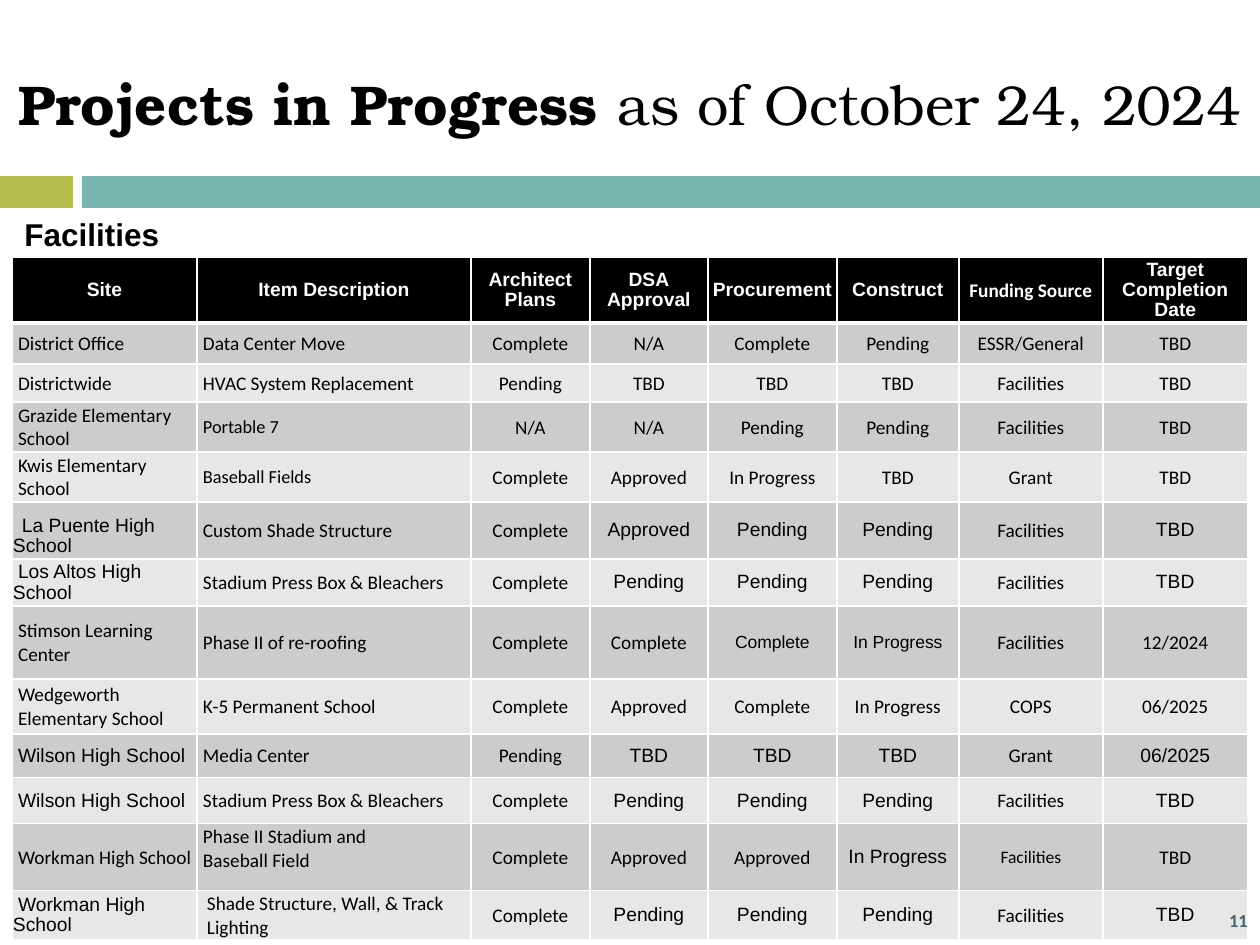
import dataclasses

import pptx
import pptx.dml.color
import pptx.enum.shapes
import pptx.enum.text
import pptx.oxml
import pptx.oxml.ns
import pptx.util

RGBColor = pptx.dml.color.RGBColor
ALIGN = pptx.enum.text.PP_ALIGN
ANCHOR = pptx.enum.text.MSO_ANCHOR

BLACK = RGBColor(0x00, 0x00, 0x00)
WHITE = RGBColor(0xFF, 0xFF, 0xFF)
DARK = RGBColor(0xCC, 0xCC, 0xCC)
LIGHT = RGBColor(0xE7, 0xE7, 0xE7)
LIME = RGBColor(0xB4, 0xBC, 0x4C)
TEAL = RGBColor(0x79, 0xB5, 0xB0)
SLATE = RGBColor(0x4A, 0x60, 0x6E)

WIDTHS = [185, 274, 119, 118, 129, 122, 144, 145]
ARIAL = frozenset({0, 3, 4, 5, 7})


@dataclasses.dataclass(frozen=True)
class Row:
    height: int
    texts: str
    arial: frozenset = frozenset()
    sizes: dict = dataclasses.field(default_factory=dict)
    indents: dict = dataclasses.field(default_factory=dict)
    tops: dict = dataclasses.field(default_factory=dict)
    bottoms: dict = dataclasses.field(default_factory=dict)


@dataclasses.dataclass(frozen=True)
class Label:
    box: tuple
    pieces: tuple
    font: str
    size: float
    color: RGBColor
    align: ALIGN
    anchor: ANCHOR = ANCHOR.MIDDLE
    bottom: int = 6


ROWS = [
    Row(66, "Site|Item Description|Architect\nPlans|DSA\nApproval|Procurement|Construct"
        "|Funding Source|Target Completion Date", frozenset({0, 1, 2, 3, 4, 5, 7})),
    Row(41, "District Office|Data Center Move|Complete|N/A|Complete|Pending|ESSR/General|TBD"),
    Row(38, "Districtwide|HVAC System Replacement|Pending|TBD|TBD|TBD|Facilities|TBD"),
    Row(50, "Grazide Elementary\nSchool|Portable 7|N/A|N/A|Pending|Pending|Facilities|TBD",
        sizes={1: 10.5}),
    Row(50, "Kwis Elementary\nSchool|Baseball Fields|Complete|Approved|In Progress|TBD|Grant|TBD",
        sizes={1: 10.5}),
    Row(57, "La Puente High School|Custom Shade Structure|Complete|Approved|Pending|Pending"
        "|Facilities|TBD", ARIAL, indents={0: 9}, tops={0: 12}),
    Row(47, "Los Altos High School|Stadium Press Box & Bleachers|Complete|Pending|Pending|Pending"
        "|Facilities|TBD", ARIAL),
    Row(73, "Stimson Learning\nCenter|Phase II of re-roofing|Complete|Complete|Complete"
        "|In Progress|Facilities|12/2024", frozenset({4, 5}), {4: 10, 5: 10}),
    Row(55, "Wedgeworth\nElementary School|K-5 Permanent School|Complete|Approved|Complete"
        "|In Progress|COPS|06/2025"),
    Row(44, "Wilson High School|Media Center|Pending|TBD|TBD|TBD|Grant|06/2025", ARIAL),
    Row(46, "Wilson High School|Stadium Press Box & Bleachers|Complete|Pending|Pending|Pending"
        "|Facilities|TBD", ARIAL),
    Row(67, "Workman High School|Phase II Stadium and\nBaseball Field|Complete|Approved|Approved"
        "|In Progress|Facilities|TBD", frozenset({5}), {6: 10}, bottoms={1: 18}),
    Row(49, "Workman High School|Shade Structure, Wall, & Track\nLighting|Complete|Pending"
        "|Pending|Pending|Facilities|TBD", ARIAL, indents={1: 9}),
]

LABELS = [
    Label((0, 82, 1260, 122),
          (("Projects in Progress ", True), ("as of October 24, 2024", False)),
          "TeX Gyre Bonum", 32, BLACK, ALIGN.CENTER, bottom=86),
    Label((12, 209, 261, 50), (("Facilities", True),),
          "Arial", 18, BLACK, ALIGN.LEFT, ANCHOR.TOP),
    Label((513, 895, 747, 50), (("11", True),), "Calibri", 10.5, SLATE, ALIGN.RIGHT),
]


def px(count: int) -> pptx.util.Emu:
    return pptx.util.Emu(round(count * 914400 / 126))


def style(run, font: str, size: float, color: RGBColor, bold: bool) -> None:
    run.font.name = font
    run.font.size = pptx.util.Pt(size)
    run.font.bold = bold
    run.font.color.rgb = color


def add_bar(slide, left: int, width: int, color: RGBColor) -> None:
    bar = slide.shapes.add_shape(pptx.enum.shapes.MSO_SHAPE.RECTANGLE,
                                 px(left), px(176), px(width), px(32))
    bar.shadow.inherit = False
    bar.fill.solid()
    bar.fill.fore_color.rgb = color
    bar.line.fill.background()


def add_label(slide, label: Label) -> None:
    frame = slide.shapes.add_textbox(*map(px, label.box)).text_frame
    frame.word_wrap = True
    frame.vertical_anchor = label.anchor
    frame.margin_bottom = px(label.bottom)
    para = frame.paragraphs[0]
    para.alignment = label.align
    for text, bold in label.pieces:
        run = para.add_run()
        run.text = text
        style(run, label.font, label.size, label.color, bold)


def add_edges(cell, head: bool) -> None:
    props = cell._tc.get_or_add_tcPr()
    for spot, side in enumerate("LRTB"):
        width = pptx.util.Pt(3 if head and side == "B" else 1)
        props.insert(spot, pptx.oxml.parse_xml(
            f'<a:ln{side} {pptx.oxml.ns.nsdecls("a")} w="{width}"><a:solidFill>'
            f'<a:srgbClr val="{WHITE}"/></a:solidFill></a:ln{side}>'))


def fill_cell(cell, text: str, row: Row, col: int, head: bool, back: RGBColor) -> None:
    cell.fill.solid()
    cell.fill.fore_color.rgb = back
    add_edges(cell, head)
    cell.vertical_anchor = ANCHOR.MIDDLE
    cell.margin_left = cell.margin_right = px(1)
    cell.margin_top = px(row.tops.get(col, 1))
    cell.margin_bottom = px(row.bottoms.get(col, 0))
    cell.text_frame.text = text
    arial = col in row.arial
    for para in cell.text_frame.paragraphs:
        if head or col > 1:
            para.alignment = ALIGN.CENTER
        else:
            para.alignment = ALIGN.LEFT
            para._p.get_or_add_pPr().set("indent", str(px(row.indents.get(col, 5))))
        if arial:
            para.line_spacing = 0.95
        for run in para.runs:
            style(run, "Arial" if arial else "Calibri", row.sizes.get(col, 11),
                  WHITE if head else BLACK, head)


def add_grid(slide) -> None:
    high = sum(row.height for row in ROWS)
    grid = slide.shapes.add_table(len(ROWS), len(WIDTHS), px(12), px(257),
                                  px(sum(WIDTHS)), px(high)).table
    for col, width in enumerate(WIDTHS):
        grid.columns[col].width = px(width)
    for rank, row in enumerate(ROWS):
        grid.rows[rank].height = px(row.height)
        head = rank == 0
        back = BLACK if head else DARK if rank % 2 else LIGHT
        for col, text in enumerate(row.texts.split("|")):
            fill_cell(grid.cell(rank, col), text, row, col, head, back)


def main() -> None:
    deck = pptx.Presentation()
    deck.slide_width, deck.slide_height = px(1260), px(945)
    slide = deck.slides.add_slide(deck.slide_layouts[6])
    add_bar(slide, 0, 73, LIME)
    add_bar(slide, 82, 1178, TEAL)
    add_grid(slide)
    for label in LABELS:
        add_label(slide, label)
    deck.save("out.pptx")


if __name__ == "__main__":
    main()
